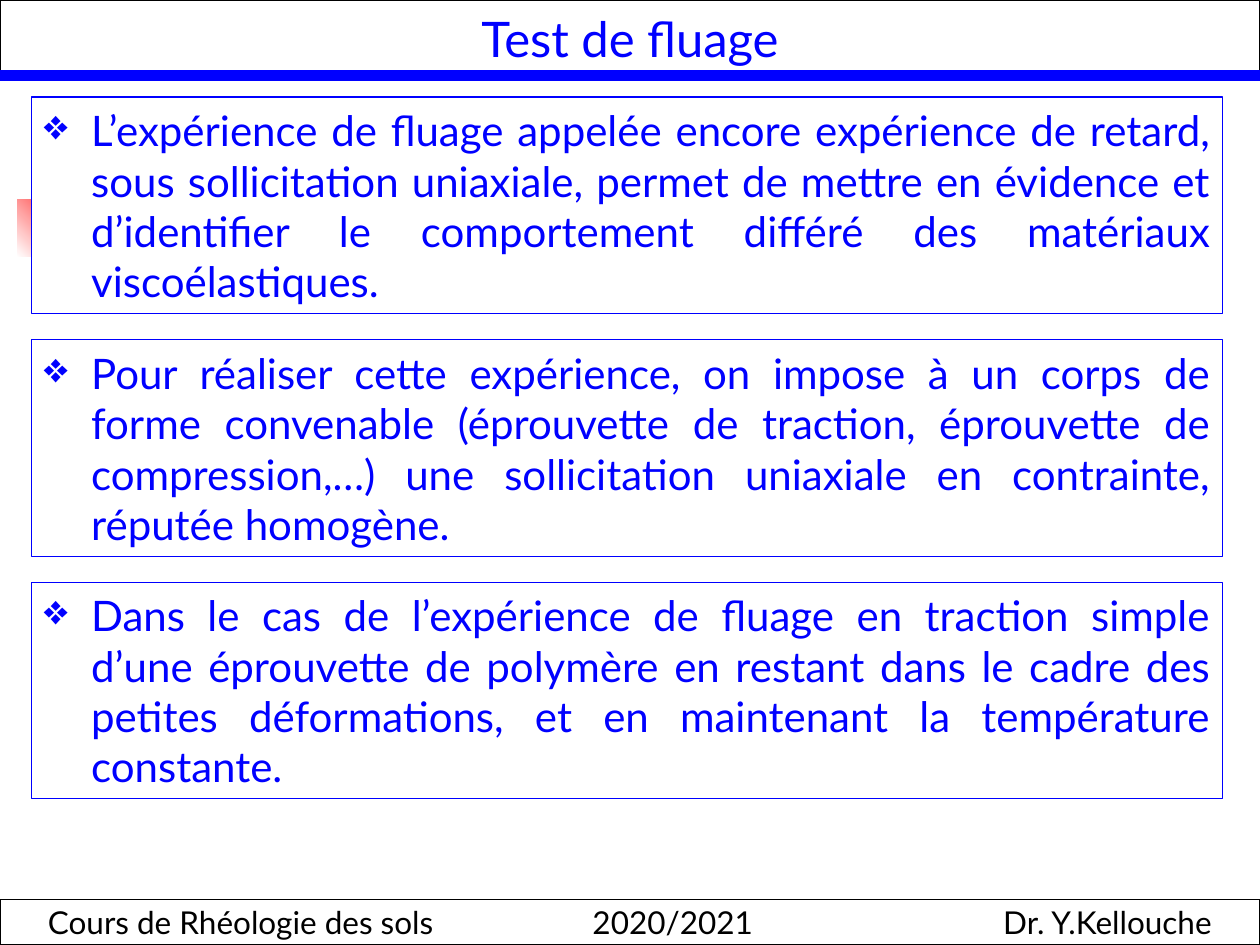
from lxml import etree
from pptx import Presentation
from pptx.dml.color import RGBColor
from pptx.enum.shapes import MSO_CONNECTOR, MSO_SHAPE
from pptx.enum.text import MSO_ANCHOR, MSO_AUTO_SIZE, PP_ALIGN
from pptx.oxml.ns import qn
from pptx.util import Pt

RECT, STRAIGHT = MSO_SHAPE.RECTANGLE, MSO_CONNECTOR.STRAIGHT
MIDDLE, GROW = MSO_ANCHOR.MIDDLE, MSO_AUTO_SIZE.SHAPE_TO_FIT_TEXT
LEFT, CENTER, JUSTIFY = PP_ALIGN.LEFT, PP_ALIGN.CENTER, PP_ALIGN.JUSTIFY
BLUE = RGBColor(0x00, 0x00, 0xFF)
RED = RGBColor(0xFF, 0x00, 0x00)
BLACK = RGBColor(0x00, 0x00, 0x00)
WHITE = RGBColor(0xFF, 0xFF, 0xFF)
FONT = "Lato"

# Content
TITLE = "Test de fluage"
POINTS = [
    "L’expérience de fluage appelée encore expérience de retard, sous "
    "sollicitation uniaxiale, permet de mettre en évidence et d’identifier "
    "le comportement différé des matériaux viscoélastiques.",
    "Pour réaliser cette expérience, on impose à un corps de forme convenable "
    "(éprouvette de traction, éprouvette de compression,…) une sollicitation "
    "uniaxiale en contrainte, réputée homogène.",
    "Dans le cas de l’expérience de fluage en traction simple d’une éprouvette "
    "de polymère en restant dans le cadre des petites déformations, et en "
    "maintenant la température constante.",
]
FOOTER = ["Cours de Rhéologie des sols", "2020/2021", "Dr. Y.Kellouche"]

# Layout, in points
W, H = 720, 540
TITLE_H, FOOTER_H = 43.2, 25.9
BOX_X, BOX_Y, BOX_W, BOX_H, BOX_STEP = 18, 55.5, 680.4, 123.8, 138.6
HANG = 27
FOOTER_INSET = 27.4
FOOTER_TABS = [("ctr", 357), ("r", 665)]

prs = Presentation()
prs.slide_width, prs.slide_height = Pt(W), Pt(H)
s = prs.slides.add_slide(prs.slide_layouts[6])


def add_rect(x, y, w, h):
    sp = s.shapes.add_shape(RECT, Pt(x), Pt(y), Pt(w), Pt(h))
    sp.shadow.inherit = False
    return sp


def add_text_box(x, y, w, h, text, size, color, line, width, align, wrap=False):
    sp = add_rect(x, y, w, h)
    sp.fill.solid()
    sp.fill.fore_color.rgb = WHITE
    sp.line.color.rgb = line
    sp.line.width = Pt(width)
    tf = sp.text_frame
    tf.word_wrap = wrap
    tf.vertical_anchor = MIDDLE
    p = tf.paragraphs[0]
    p.alignment = align
    r = p.add_run()
    r.text = text
    r.font.size = Pt(size)
    r.font.name = FONT
    r.font.color.rgb = color
    return tf


# Gradient accent behind the first box
accent = add_rect(10, 113.8, 44, 33)
accent.line.fill.background()
accent.fill.gradient()
accent.fill.gradient_angle = 45
for stop, color in zip(accent.fill.gradient_stops, (WHITE, RED)):
    stop.color.rgb = color

# Title band and its rule
add_text_box(0, 0, W, TITLE_H, TITLE, 28, BLUE, BLACK, 1.5, CENTER)
rule = s.shapes.add_connector(STRAIGHT, 0, Pt(TITLE_H), Pt(W), Pt(TITLE_H))
rule.line.color.rgb = BLUE
rule.line.width = Pt(6)
etree.SubElement(rule._element.spPr, qn("a:effectLst"))

# Footer band: left, centred and right parts on tab stops
tf = add_text_box(0, H - FOOTER_H, W, FOOTER_H, "\t".join(FOOTER), 18, BLACK,
                  BLACK, 0.75, LEFT, wrap=True)
tf.margin_left = Pt(FOOTER_INSET)
tabs = etree.SubElement(tf.paragraphs[0]._p.get_or_add_pPr(), qn("a:tabLst"))
for algn, pos in FOOTER_TABS:
    etree.SubElement(tabs, qn("a:tab"), pos=str(Pt(pos)), algn=algn)

# Bulleted boxes
for i, point in enumerate(POINTS):
    tf = add_text_box(BOX_X, BOX_Y + i * BOX_STEP, BOX_W, BOX_H, point, 24,
                      BLUE, BLUE, 0.75, JUSTIFY, wrap=True)
    tf.auto_size = GROW
    pPr = tf.paragraphs[0]._p.get_or_add_pPr()
    pPr.set("marL", str(Pt(HANG)))
    pPr.set("indent", str(Pt(-HANG)))
    etree.SubElement(pPr, qn("a:buChar"), char="❖")

prs.save("out.pptx")
